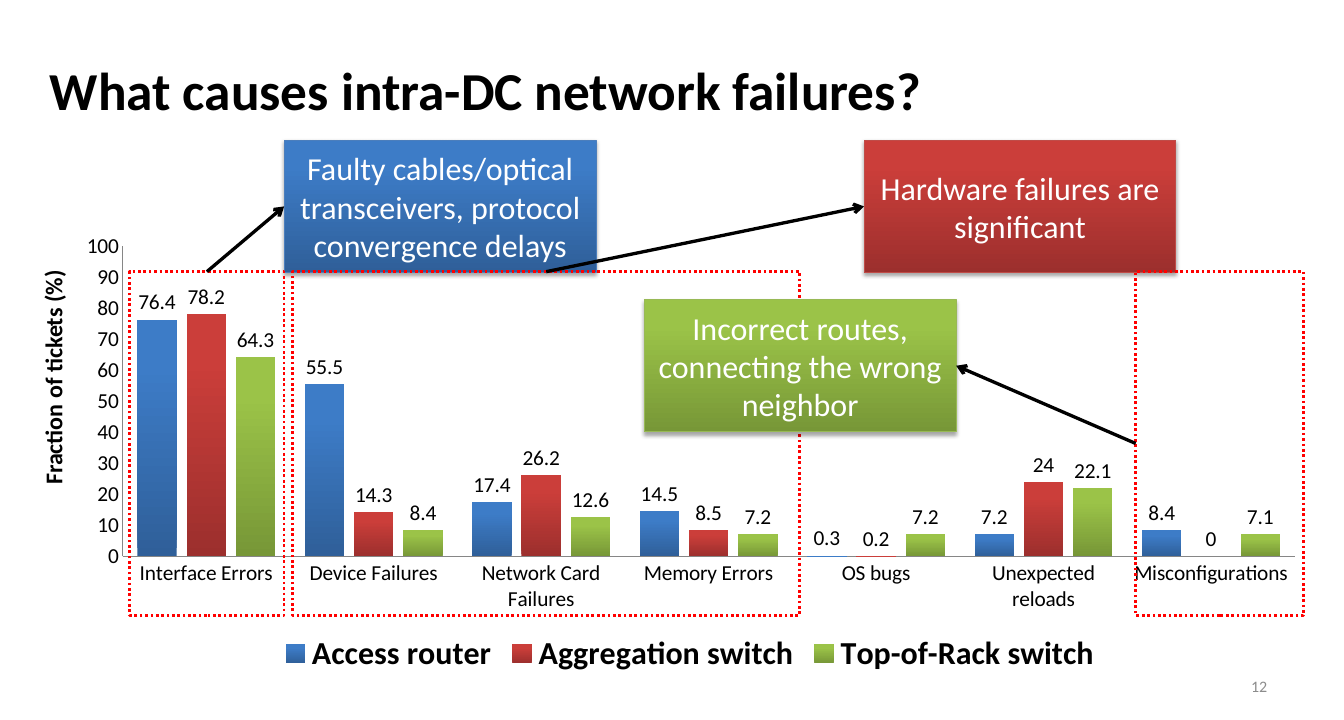
"""Build the slide on the causes of intra-DC network failures."""
from lxml import etree
from pptx import Presentation
from pptx.chart.data import CategoryChartData
from pptx.dml.color import RGBColor
from pptx.enum import chart as kinds, dml, shapes, text
from pptx.oxml import ns, parse_xml
from pptx.util import Inches, Pt

TITLE = "What causes intra-DC network failures?"
AXIS_TITLE = "Fraction of tickets (%)"
PAGE_NUMBER = "12"
FONT = "Calibri"
BLUE, RED, GREEN = ("2F5F99", "3D7CC7"), ("9C2F2D", "CB3E3A"), ("779737", "9BC348")
CAUSES = ["Interface Errors", "Device Failures", "Network Card Failures", "Memory Errors",
          "OS bugs", "Unexpected reloads", "Misconfigurations"]
SERIES = [
    ("Access router", BLUE, (76.4, 55.5, 17.4, 14.5, 0.3, 7.2, 8.4)),
    ("Aggregation switch", RED, (78.2, 14.3, 26.2, 8.5, 0.2, 24, 0)),
    ("Top-of-Rack switch", GREEN, (64.3, 8.4, 12.6, 7.2, 7.2, 22.1, 7.1)),
]
TOP, LEFT, RIGHT = 0, 1, 3
CALLOUT_SIZE = (3.25, 1.38)
FRAME_TOP, FRAME_HEIGHT = 2.83, 3.58
CALLOUTS = [
    dict(words="Faulty cables/optical transceivers, protocol convergence delays", at=(2.96, 1.46),
         shades=BLUE, edge="4B7EBC", frame=(1.35, 1.61), sites=(TOP, LEFT)),
    dict(words="Hardware failures are significant", at=(9, 1.46),
         shades=RED, edge="BF4C48", frame=(3.05, 5.28), sites=(TOP, LEFT)),
    dict(words="Incorrect routes, connecting the wrong neighbor", at=(6.71, 3.12),
         shades=GREEN, edge="98B955", frame=(11.83, 1.75), sites=(LEFT, RIGHT)),
]
PLOT_AREA = dict(x=0.05, y=0.05, w=0.93, h=0.68)
SHADOW = (f'<a:effectLst {ns.nsdecls("a")}><a:outerShdw blurRad="40000" dist="23000" dir="5400000" '
          'rotWithShape="0"><a:srgbClr val="000000"><a:alpha val="35000"/></a:srgbClr>'
          '</a:outerShdw></a:effectLst>')


def color(value):
    return RGBColor.from_string(value)


def set_font(font, size, shade="000000", bold=False):
    font.name, font.size, font.bold = FONT, Pt(size), bold
    font.color.rgb = color(shade)


def shade_fill(fill, shades):
    fill.gradient()
    fill.gradient_angle = 90
    for stop, shade, position in zip(fill.gradient_stops, shades, (0, 0.8)):
        stop.color.rgb = color(shade)
        stop.position = position


def write(shape, words, size, shade="000000", bold=False, align=text.PP_ALIGN.LEFT, wrap=True):
    frame = shape.text_frame
    frame.word_wrap = wrap
    frame.vertical_anchor = text.MSO_ANCHOR.MIDDLE
    para = frame.paragraphs[0]
    para.text, para.alignment = words, align
    set_font(para.font, size, shade, bold)


def add_text(page, area, words, size, **style):
    box = page.shapes.add_textbox(*map(Inches, area))
    write(box, words, size, **style)
    return box


def add_rectangle(page, area, edge, width):
    box = page.shapes.add_shape(shapes.MSO_SHAPE.RECTANGLE, *map(Inches, area))
    box.shadow.inherit = False
    box.line.color.rgb = color(edge)
    box.line.width = Pt(width)
    return box


def add_ticket_chart(page):
    data = CategoryChartData()
    data.categories = CAUSES
    for name, _, values in SERIES:
        data.add_series(name, values)
    area = map(Inches, (0.62, 2.33, 13.13, 4.75))
    chart = page.shapes.add_chart(kinds.XL_CHART_TYPE.COLUMN_CLUSTERED, *area, data).chart
    set_font(chart.font, 16)
    chart.has_title = False
    chart.has_legend = True
    chart.legend.position = kinds.XL_LEGEND_POSITION.BOTTOM
    chart.legend.include_in_layout = False
    set_font(chart.legend.font, 24, bold=True)

    plot = chart.plots[0]
    plot.gap_width, plot.overlap, plot.vary_by_categories = 75, -25, False
    plot.has_data_labels = True
    plot.data_labels.show_value = True
    plot.data_labels.position = kinds.XL_LABEL_POSITION.OUTSIDE_END
    set_font(plot.data_labels.font, 16)
    for series, (_, shades, _) in zip(plot.series, SERIES):
        shade_fill(series.format.fill, shades)
        series.invert_if_negative = False

    for axis in (chart.category_axis, chart.value_axis):
        axis.major_tick_mark = axis.minor_tick_mark = kinds.XL_TICK_MARK.NONE
        axis.has_major_gridlines = False
        axis.format.line.color.rgb = color("868686")
        set_font(axis.tick_labels.font, 16)
    values = chart.value_axis
    values.minimum_scale, values.maximum_scale, values.major_unit = 0, 100, 10

    plot_area = chart.element.find(".//" + ns.qn("c:plotArea"))
    for old in plot_area.findall(ns.qn("c:layout")):
        plot_area.remove(old)
    layout = etree.Element(ns.qn("c:layout"))
    manual = etree.SubElement(layout, ns.qn("c:manualLayout"))
    settings = dict(layoutTarget="inner", xMode="edge", yMode="edge", **PLOT_AREA)
    for tag, value in settings.items():
        etree.SubElement(manual, ns.qn("c:" + tag), val=str(value))
    plot_area.insert(0, layout)


def add_callout(page, words, at, shades, edge, frame, sites):
    callout = add_rectangle(page, at + CALLOUT_SIZE, edge, 0.75)
    shade_fill(callout.fill, shades)
    properties = callout.element.spPr
    properties.replace(properties.find(ns.qn("a:effectLst")), parse_xml(SHADOW))
    write(callout, words, 24, "FFFFFF", align=text.PP_ALIGN.CENTER)

    left, width = frame
    outline = add_rectangle(page, (left, FRAME_TOP, width, FRAME_HEIGHT), "FF0000", 2)
    outline.fill.background()
    outline.line.dash_style = dml.MSO_LINE.ROUND_DOT

    arrow = page.shapes.add_connector(shapes.MSO_CONNECTOR.STRAIGHT, 0, 0, 0, 0)
    arrow.begin_connect(outline, sites[0])
    arrow.end_connect(callout, sites[1])
    arrow.line.color.rgb = color("000000")
    arrow.line.width = Pt(2.5)
    etree.SubElement(arrow.line._get_or_add_ln(), ns.qn("a:tailEnd"), type="arrow")
    etree.SubElement(arrow.element.spPr, ns.qn("a:effectLst"))


def main():
    deck = Presentation()
    deck.slide_width, deck.slide_height = Inches(14), Inches(7.5)
    page = deck.slides.add_slide(deck.slide_layouts[6])
    add_text(page, (0.42, 0.3, 13.17, 1.25), TITLE, 40, bold=True)
    add_text(page, (10.03, 6.95, 3.27, 0.4), PAGE_NUMBER, 12, shade="8C8C8C",
             align=text.PP_ALIGN.RIGHT)
    add_ticket_chart(page)
    label = add_text(page, (-0.68, 3.72, 2.46, 0.4), AXIS_TITLE, 18, bold=True, wrap=False)
    label.rotation = 270
    for callout in CALLOUTS:
        add_callout(page, **callout)
    deck.save("out.pptx")


if __name__ == "__main__":
    main()
